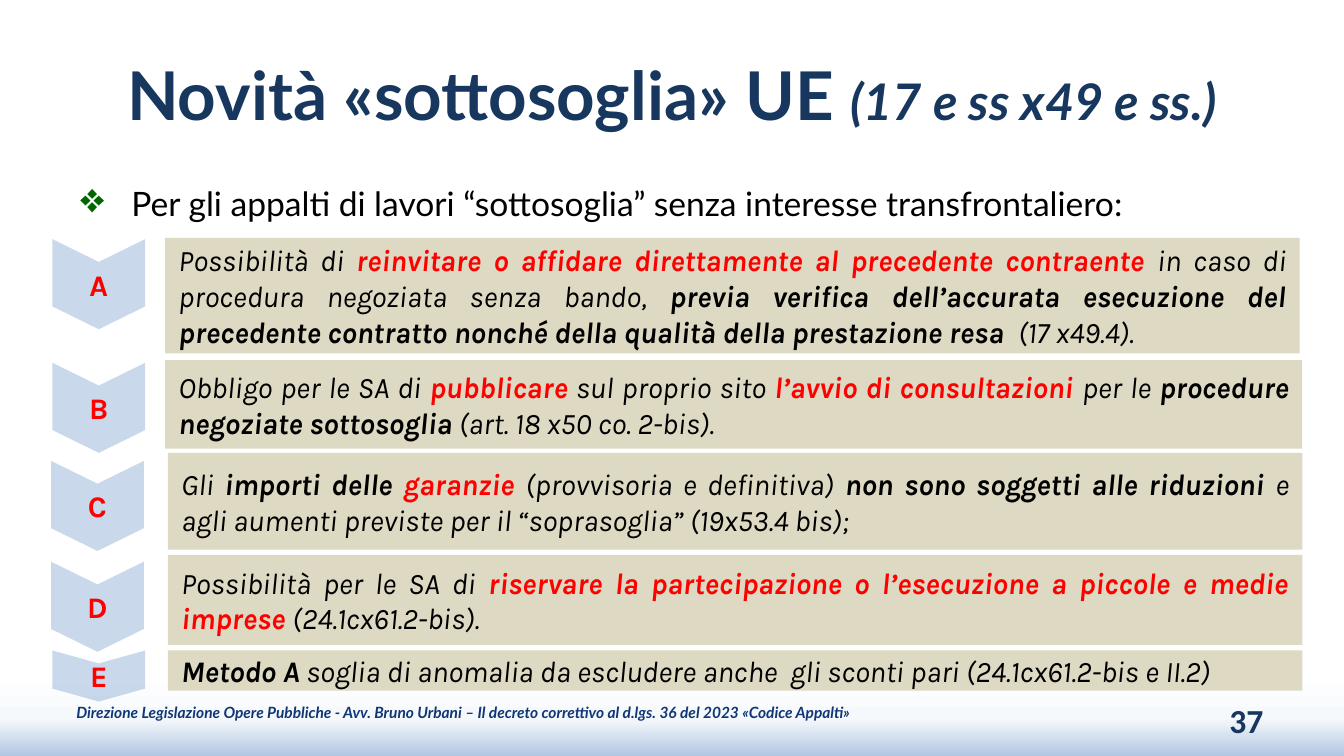
from copy import deepcopy
from typing import NamedTuple

from lxml.etree import SubElement
from pptx import Presentation
from pptx.dml.color import RGBColor as Rgb
from pptx.enum.shapes import MSO_SHAPE as Shape
from pptx.enum.text import MSO_ANCHOR as Anchor, PP_ALIGN as Align
from pptx.oxml.ns import qn
from pptx.util import Inches, Pt

COLORS = {
    "navy": "17375E", "footer": "103676", "black": "000000", "red": "FF0000",
    "bullet": "006600", "chevron": "95B3D7", "panel": "DDD9C3",
}
BACKGROUND_STOPS = [(89, "FFFFFF"), (95, "F6F9FC"), (100, "B0C6E1")]
CHEVRON_WIDTH = 0.69

PLAIN = dict(size=16, name="Karla", color="black", italic=True, bold=False)
BOLD = PLAIN | dict(bold=True)
ALERT = BOLD | dict(color="red")
LETTER = ALERT | dict(italic=False)
TITLE = dict(size=36, name="Lato", color="navy", bold=True)
SUBTITLE = TITLE | dict(size=27, italic=True)
INTRO = dict(size=18, name="Lato", color="black")
NUMBER = dict(size=18, name="Calibri", color="navy", bold=True)
FOOTER = dict(size=8.3, name="Lato", color="footer", bold=True, italic=True)


class Frame(NamedTuple):
    left: float
    top: float
    width: float
    height: float


class Span(NamedTuple):
    text: str
    style: dict


class Row(NamedTuple):
    letter: str
    chevron: Frame
    panel: Frame
    spans: list[Span]


ROWS = [
    Row("A", Frame(0.39, 1.78, CHEVRON_WIDTH, 0.67), Frame(1.23, 1.77, 8.44, 0.86), [
        Span("Possibilità di ", PLAIN),
        Span("reinvitare o affidare direttamente al precedente contraente", ALERT),
        Span(" in caso di procedura negoziata senza bando, ", PLAIN),
        Span("previa verifica dell’accurata esecuzione del precedente contratto "
             "nonché della qualità della prestazione resa  ", BOLD),
        Span("(17 x49.4).", PLAIN),
    ]),
    Row("B", Frame(0.39, 2.7, CHEVRON_WIDTH, 0.67), Frame(1.23, 2.68, 8.46, 0.66), [
        Span("Obbligo per le SA di ", PLAIN),
        Span("pubblicare", ALERT),
        Span(" sul proprio sito ", PLAIN),
        Span("l’avvio di consultazioni ", ALERT),
        Span("per le ", PLAIN),
        Span("procedure negoziate sottosoglia", BOLD),
        Span(" (art. 18 x50 co. 2-bis).", PLAIN),
    ]),
    Row("C", Frame(0.38, 3.43, CHEVRON_WIDTH, 0.67), Frame(1.25, 3.37, 8.44, 0.72), [
        Span("Gli ", PLAIN),
        Span("importi delle ", BOLD),
        Span("garanzie ", ALERT),
        Span("(provvisoria e definitiva) ", PLAIN),
        Span("non sono soggetti alle riduzioni ", BOLD),
        Span("e agli aumenti previste per il “soprasoglia” (19x53.4 bis);", PLAIN),
    ]),
    Row("D", Frame(0.38, 4.18, CHEVRON_WIDTH, 0.67), Frame(1.25, 4.13, 8.44, 0.67), [
        Span("Possibilità per le SA di ", PLAIN),
        Span("riservare la partecipazione o l’esecuzione a piccole e medie imprese ", ALERT),
        Span("(24.1cx61.2-bis).", PLAIN),
    ]),
    Row("E", Frame(0.39, 4.84, CHEVRON_WIDTH, 0.38), Frame(1.25, 4.84, 8.44, 0.3), [
        Span("Metodo A", BOLD),
        Span(" soglia di anomalia da escludere anche  gli sconti pari "
             "(24.1cx61.2-bis e II.2)", PLAIN),
    ]),
]


def lengths(frame: Frame) -> list[Inches]:
    return [Inches(value) for value in frame]


def write(box, spans: list[Span], align: Align, anchor: Anchor = Anchor.MIDDLE):
    text = box.text_frame
    text.word_wrap = True
    text.vertical_anchor = anchor
    para = text.paragraphs[0]
    para.alignment = align
    for span in spans:
        run = para.add_run()
        run.text = span.text
        for key, value in span.style.items():
            if key == "color":
                run.font.color.rgb = Rgb.from_string(COLORS[value])
            else:
                setattr(run.font, key, Pt(value) if key == "size" else value)
    return para


def add_text(slide, frame: Frame, spans: list[Span], align: Align,
             anchor: Anchor = Anchor.MIDDLE):
    return write(slide.shapes.add_textbox(*lengths(frame)), spans, align, anchor)


def add_filled(slide, kind: Shape, frame: Frame, color: str):
    shape = slide.shapes.add_shape(kind, *lengths(frame))
    shape.shadow.inherit = False
    shape.fill.solid()
    shape.fill.fore_color.rgb = Rgb.from_string(COLORS[color])
    shape.line.fill.background()
    return shape


def add_chevron(slide, frame: Frame, letter: str) -> None:
    """Draw a half-transparent chevron pointing down, with an upright letter.

    The frame is the visible one; the unrotated shape swaps its sides.
    """
    unrotated = Frame(frame.left + (frame.width - frame.height) / 2,
                      frame.top + (frame.height - frame.width) / 2,
                      frame.height, frame.width)
    chevron = add_filled(slide, Shape.CHEVRON, unrotated, "chevron")
    chevron.rotation = 90
    chevron.adjustments[0] = 0.253
    color = next(chevron._element.iter(qn("a:srgbClr")))
    SubElement(color, qn("a:alpha"), val="50000")
    write(chevron, [Span(letter, LETTER)], Align.CENTER)
    chevron.text_frame._txBody.bodyPr.set("vert", "vert270")


def add_bullet(para, char: str, color: str, indent: float, percent: int) -> None:
    properties = para._p.get_or_add_pPr()
    properties.set("marL", str(Inches(indent)))
    properties.set("indent", str(-Inches(indent)))
    bullet_color = SubElement(properties, qn("a:buClr"))
    SubElement(bullet_color, qn("a:srgbClr"), val=COLORS[color])
    SubElement(properties, qn("a:buSzPct"), val=str(percent * 1000))
    SubElement(properties, qn("a:buChar"), char=char)


def paint_background(slide) -> None:
    fill = slide.background.fill
    fill.gradient()
    fill.gradient_angle = 270
    stop_list = next(slide._element.iter(qn("a:gsLst")))
    stop_list.append(deepcopy(stop_list[0]))
    for stop, (position, color) in zip(fill.gradient_stops, BACKGROUND_STOPS):
        stop.position = position / 100
        stop.color.rgb = Rgb.from_string(color)


def main() -> None:
    deck = Presentation()
    deck.slide_width = Inches(10)
    deck.slide_height = deck.slide_width * 9 // 16
    slide = deck.slides.add_slide(deck.slide_layouts[6])
    paint_background(slide)

    add_text(slide, Frame(0.5, 0.23, 9, 0.94),
             [Span("Novità «sottosoglia» UE ", TITLE),
              Span("(17 e ss x49 e ss.)", SUBTITLE)], Align.CENTER)
    add_text(slide, Frame(7.17, 5.21, 2.33, 0.3), [Span("37", NUMBER)], Align.RIGHT)
    add_text(slide, Frame(0.47, 5.15, 6.4, 0.3),
             [Span("Direzione Legislazione Opere Pubbliche - Avv. Bruno Urbani – Il decreto "
                   "correttivo al d.lgs. 36 del 2023 «Codice Appalti»", FOOTER)], Align.LEFT)
    intro = add_text(slide, Frame(0.5, 1.31, 9, 0.4),
                     [Span("Per gli appalti di lavori “sottosoglia” senza interesse "
                           "transfrontaliero:", INTRO)], Align.LEFT, Anchor.TOP)
    add_bullet(intro, "❖", "bullet", 0.38, 125)

    for row in ROWS:
        add_chevron(slide, row.chevron, row.letter)
        panel = add_filled(slide, Shape.RECTANGLE, row.panel, "panel")
        write(panel, row.spans, Align.JUSTIFY)

    deck.save("out.pptx")


if __name__ == "__main__":
    main()
